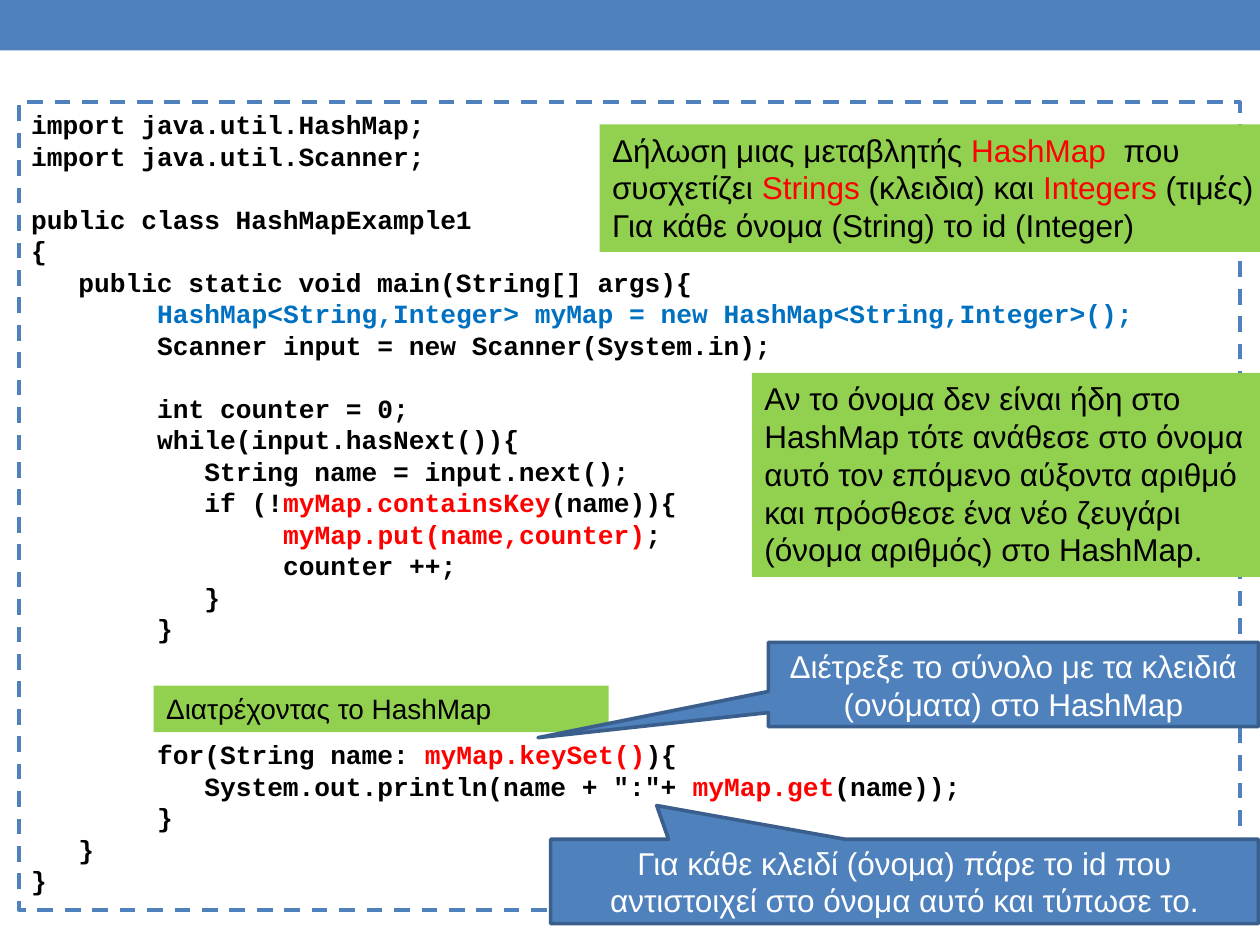
"""Build a slide that walks through a HashMap example in Java."""
from pptx import Presentation
from pptx.dml.color import RGBColor
from pptx.enum.dml import MSO_LINE
from pptx.enum.shapes import MSO_SHAPE
from pptx.enum.text import MSO_ANCHOR, PP_ALIGN
from pptx.util import Cm, Pt

RECT = MSO_SHAPE.RECTANGLE
CALLOUT = MSO_SHAPE.RECTANGULAR_CALLOUT
DASH = MSO_LINE.DASH
TOP, MIDDLE = MSO_ANCHOR.TOP, MSO_ANCHOR.MIDDLE
LEFT, CENTER = PP_ALIGN.LEFT, PP_ALIGN.CENTER

BLUE = RGBColor(0x4F, 0x81, 0xBD)
NAVY = RGBColor(0x3A, 0x5F, 0x8C)
GREEN = RGBColor(0x92, 0xD0, 0x50)
SKY = RGBColor(0x00, 0x70, 0xC0)
RED = RGBColor(0xFF, 0x00, 0x00)
BLACK = RGBColor(0x00, 0x00, 0x00)
WHITE = RGBColor(0xFF, 0xFF, 0xFF)

TAB, STEP = 2.54, 0.95
LEADING = 1.2

# Each row: tabs, steps, blank lines above, text with accents between bars.
CODE = [
    (0, 0, 0, "import java.util.HashMap;"),
    (0, 0, 0, "import java.util.Scanner;"),
    (0, 0, 1, "public class HashMapExample1"),
    (0, 0, 0, "{"),
    (0, 1, 0, "public static void main(String[] args){"),
    (1, 0, 0, "|HashMap<String,Integer> myMap = new HashMap<String,Integer>();|"),
    (1, 0, 0, "Scanner input = new Scanner(System.in);"),
    (1, 0, 1, "int counter = 0;"),
    (1, 0, 0, "while(input.hasNext()){"),
    (1, 1, 0, "String name = input.next();"),
    (1, 1, 0, "if (!|myMap.containsKey|(name)){"),
    (2, 0, 0, "|myMap.put(name,counter)|;"),
    (2, 0, 0, "counter ++;"),
    (1, 1, 0, "}"),
    (1, 0, 0, "}"),
    (1, 0, 3, "for(String name: |myMap.keySet()|){"),
    (1, 1, 0, 'System.out.println(name + ":"+ |myMap.get|(name));'),
    (1, 0, 0, "}"),
    (0, 1, 0, "}"),
    (0, 0, 0, "}"),
]

NOTES = [
    ((12.09, 2.51, 13.46, 2.57), 18, [
        "Δήλωση μιας μεταβλητής |HashMap  |που συσχετίζει |Strings |"
        "(κλειδια) και |Integers |(τιμές)",
        "Για κάθε όνομα (String) το id (Integer)"]),
    ((15.16, 7.52, 10.49, 4.11), 18, [
        "Αν το όνομα δεν είναι ήδη στο HashMap τότε ανάθεσε στο όνομα αυτό "
        "τον επόμενο αύξοντα αριθμό και πρόσθεσε ένα νέο ζευγάρι "
        "(όνομα αριθμός) στο HashMap."]),
    ((3.1, 13.82, 9.17, 0.94), 16, ["Διατρέχοντας το HashMap"]),
]

TIPS = [
    ((15.49, 12.95, 9.88, 1.7), (-0.97, 0.63),
     "Διέτρεξε το σύνολο με τα κλειδιά (ονόματα) στο HashMap"),
    ((11.1, 16.92, 14.27, 1.7), (-0.35, -0.9),
     "Για κάθε κλειδί (όνομα) πάρε το id που αντιστοιχεί στο όνομα αυτό "
     "και τύπωσε το."),
]


def block(slide, kind, at, fill=None, line=None, width=1, dash=None):
    """Add a flat shape at a place given in centimetres."""
    shape = slide.shapes.add_shape(kind, *map(Cm, at))
    shape.shadow.inherit = False
    if fill is None:
        shape.fill.background()
    else:
        shape.fill.solid()
        shape.fill.fore_color.rgb = fill
    if line is None:
        shape.line.fill.background()
    else:
        shape.line.color.rgb = line
        shape.line.width = Pt(width)
        if dash is not None:
            shape.line.dash_style = dash
    return shape


def write(par, text, size=18, font="Arial", color=BLACK, accent=RED,
          bold=False, align=LEFT, indent=0, blanks=0):
    """Fill a paragraph, with the pieces between bars in the accent colour."""
    par.alignment = align
    par.line_spacing = Pt(size * LEADING)
    par.space_before = Pt(size * LEADING * blanks)
    if indent:
        props = par._p.get_or_add_pPr()
        props.set("marL", str(Cm(indent)))
        props.set("indent", "0")
    for spot, piece in enumerate(text.split("|")):
        if piece:
            run = par.add_run()
            run.text = piece
            run.font.size = Pt(size)
            run.font.name = font
            run.font.bold = bold
            run.font.color.rgb = accent if spot % 2 else color


def lines(shape, count, anchor=TOP):
    """Return a list of empty paragraphs in a shape."""
    frame = shape.text_frame
    frame.word_wrap = True
    frame.vertical_anchor = anchor
    return [frame.paragraphs[0]] + [frame.add_paragraph() for _ in range(count - 1)]


def listing(slide):
    """Add the dashed frame with the Java code."""
    frame = block(slide, RECT, (0.38, 2.06, 24.61, 16.28),
                  line=BLUE, width=2.25, dash=DASH)
    for par, (tabs, steps, blanks, text) in zip(lines(frame, len(CODE)), CODE):
        write(par, text, size=15, font="Courier New", bold=True, blanks=blanks,
              accent=SKY if text.startswith("|HashMap") else RED,
              indent=tabs * TAB + steps * STEP)


def note(slide, at, size, texts):
    """Add a green note."""
    shape = block(slide, RECT, at, fill=GREEN)
    for par, text in zip(lines(shape, len(texts)), texts):
        write(par, text, size=size)


def tip(slide, at, point, text):
    """Add a blue callout that points at a line of code."""
    shape = block(slide, CALLOUT, at, fill=BLUE, line=NAVY, width=2.08)
    shape.adjustments[0], shape.adjustments[1] = point
    write(lines(shape, 1, MIDDLE)[0], text, color=WHITE, align=CENTER)


def main():
    """Build and save the slide."""
    deck = Presentation()
    deck.slide_width, deck.slide_height = Cm(25.4), Cm(19.05)
    slide = deck.slides.add_slide(deck.slide_layouts[6])
    block(slide, RECT, (0, 0, 25.4, 1.02), fill=BLUE)
    listing(slide)
    for item in NOTES:
        note(slide, *item)
    for item in TIPS:
        tip(slide, *item)
    deck.save("out.pptx")


if __name__ == "__main__":
    main()
